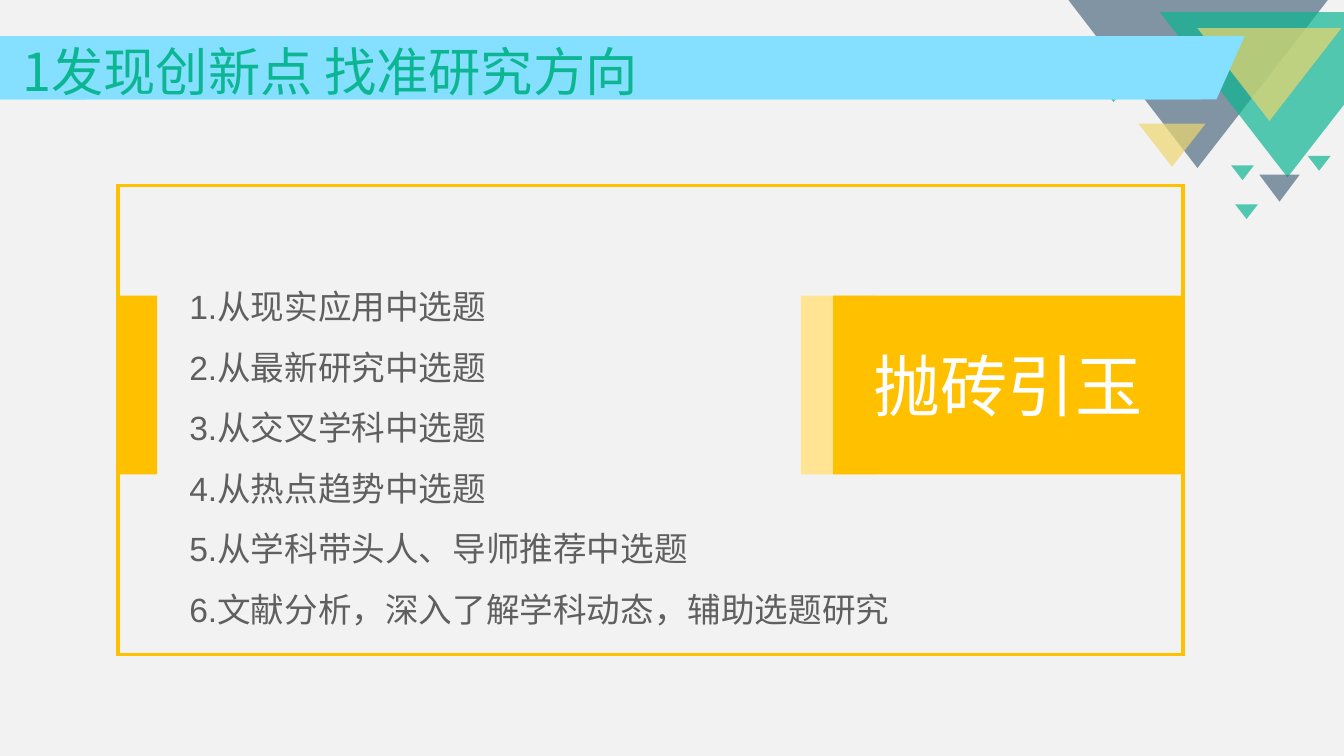
from lxml import etree
from pptx import Presentation
from pptx.dml.color import RGBColor
from pptx.enum import shapes, text
from pptx.oxml.ns import qn
from pptx.util import Inches, Pt

W = 10
H = W * 9 / 16
SHAPE = shapes.MSO_SHAPE
CJK = "Noto Sans CJK SC"
COLORS = {
    "page": "F2F2F2", "slate": "516D82", "green": "0CB692", "sand": "EED66F",
    "sky": "85DFFF", "amber": "FFC000", "cream": "FFE593",
    "white": "FFFFFF", "grey": "5F5F5F",
}
TOPICS = [
    "从现实应用中选题",
    "从最新研究中选题",
    "从交叉学科中选题",
    "从热点趋势中选题",
    "从学科带头人、导师推荐中选题",
    "文献分析，深入了解学科动态，辅助选题研究",
]


def rgb(name):
    return RGBColor.from_string(COLORS[name])


def paint(sp, fill=None, line=None, width=2, alpha=None):
    sp.shadow.inherit = False
    if fill:
        sp.fill.solid()
        sp.fill.fore_color.rgb = rgb(fill)
        if alpha:
            color = sp.fill._xPr.find(qn("a:solidFill"))[0]
            etree.SubElement(color, qn("a:alpha"), val=str(alpha * 1000))
    else:
        sp.fill.background()
    if line:
        sp.line.color.rgb = rgb(line)
        sp.line.width = Pt(width)
        etree.SubElement(sp.line._get_or_add_ln(), qn("a:miter"), lim="800000")
    else:
        sp.line.fill.background()
    return sp


def add_shape(slide, kind, box, **style):
    sp = slide.shapes.add_shape(kind, *(Inches(v) for v in box))
    return paint(sp, **style)


def write(sp, lines, size, color, font=CJK, spacing=1.0, align=None,
          anchor=text.MSO_ANCHOR.TOP, inset=None):
    tf = sp.text_frame
    tf.word_wrap = True
    tf.vertical_anchor = anchor
    if inset is not None:
        tf.margin_left = tf.margin_right = tf.margin_top = tf.margin_bottom = inset
    for i, line in enumerate(lines):
        p = tf.add_paragraph() if i else tf.paragraphs[0]
        p.line_spacing = spacing
        p.alignment = align
        r = p.add_run()
        r.text = line
        r.font.size, r.font.name = Pt(size), font
        r.font.color.rgb = rgb(color)
        etree.SubElement(r._r.get_or_add_rPr(), qn("a:ea"), typeface=CJK)


def add_textbox(slide, box, lines, **style):
    sp = slide.shapes.add_textbox(*(Inches(v) for v in box))
    write(sp, lines, **style)


def corner_triangles(slide, x, y):
    """Translucent downward triangles, placed from the corner at x, y."""
    clipped = [
        ("slate", [(0, 0), (1.93, 0), (0.96, 1.25)]),
        ("green", [(0.68, 0.09), (2.05, 0.09), (2.05, 0.78), (1.63, 1.32)]),
    ]
    for color, points in clipped:
        points = [(Inches(x + dx), Inches(y + dy)) for dx, dy in points]
        builder = slide.shapes.build_freeform(*points[0], scale=1.0)
        builder.add_line_segments(points[1:], close=True)
        paint(builder.convert_to_shape(), fill=color, alpha=70)

    large, medium, small, tiny = (1.07, 0.69), (0.5, 0.32), (0.3, 0.2), (0.17, 0.11)
    for color, dx, dy, size in [
        ("sand", 0.96, 0.21, large), ("sand", 0.52, 0.92, medium),
        ("green", 1.78, 1.16, tiny), ("green", 1.24, 1.52, tiny),
        ("green", 1.21, 1.23, tiny), ("slate", 1.42, 1.3, small),
        ("green", 0.25, 0.65, tiny),
    ]:
        sp = add_shape(slide, SHAPE.ISOSCELES_TRIANGLE, (x + dx, y + dy, *size),
                       fill=color, alpha=70)
        sp.rotation = 180


def title_band(slide, x, y, w, h, title):
    for kind, dx, width, flipped in [
        (SHAPE.PARALLELOGRAM, 0, w, False),
        (SHAPE.RECTANGLE, 0, 0.67, False),
        (SHAPE.PARALLELOGRAM, 0.36, w - 0.68, True),
    ]:
        sp = add_shape(slide, kind, (x + dx, y, width, h), fill="sky")
        if kind == SHAPE.PARALLELOGRAM:
            sp.adjustments[0] = 0.445
        if flipped:
            sp._element.spPr.find(qn("a:xfrm")).set("flipH", "1")
    add_textbox(slide, (x + 0.1, y - 0.04, w - 0.27, h + 0.18), [title],
                size=28, color="green", spacing=0.9,
                anchor=text.MSO_ANCHOR.MIDDLE)


def topic_panel(slide, x, y, w, h, label, topics):
    """Framed numbered list with a tab on the left and a label on the right."""
    tab_y, tab_h, label_w = y + 0.82, 1.33, 2.6
    label_x = x + w - label_w
    add_shape(slide, SHAPE.RECTANGLE, (label_x - 0.24, tab_y, 0.56, tab_h), fill="cream")
    add_shape(slide, SHAPE.RECTANGLE, (x, y, w, h), line="amber")
    sp = add_shape(slide, SHAPE.RECTANGLE, (label_x, tab_y, label_w, tab_h), fill="amber")
    write(sp, [label], size=36, color="white", align=text.PP_ALIGN.CENTER,
          anchor=text.MSO_ANCHOR.MIDDLE, inset=0)
    add_shape(slide, SHAPE.RECTANGLE, (x, tab_y, 0.29, tab_h), fill="amber")
    lines = [f"{n}.{topic}" for n, topic in enumerate(topics, 1)]
    add_textbox(slide, (x + 0.43, y + 0.55, 6.41, 2.8), lines,
                size=18, color="grey", font="Arial", spacing=1.5)


def main():
    prs = Presentation()
    prs.slide_width, prs.slide_height = Inches(W), Inches(H)
    slide = prs.slides.add_slide(prs.slide_layouts[6])
    add_shape(slide, SHAPE.RECTANGLE, (0, 0, W, H), fill="page")
    corner_triangles(slide, W - 2.05, 0)
    title_band(slide, -0.03, 0.27, 9.29, 0.47, "1发现创新点 找准研究方向")
    topic_panel(slide, 0.88, 1.38, 7.92, 3.49, "抛砖引玉", TOPICS)
    prs.save("out.pptx")


if __name__ == "__main__":
    main()
